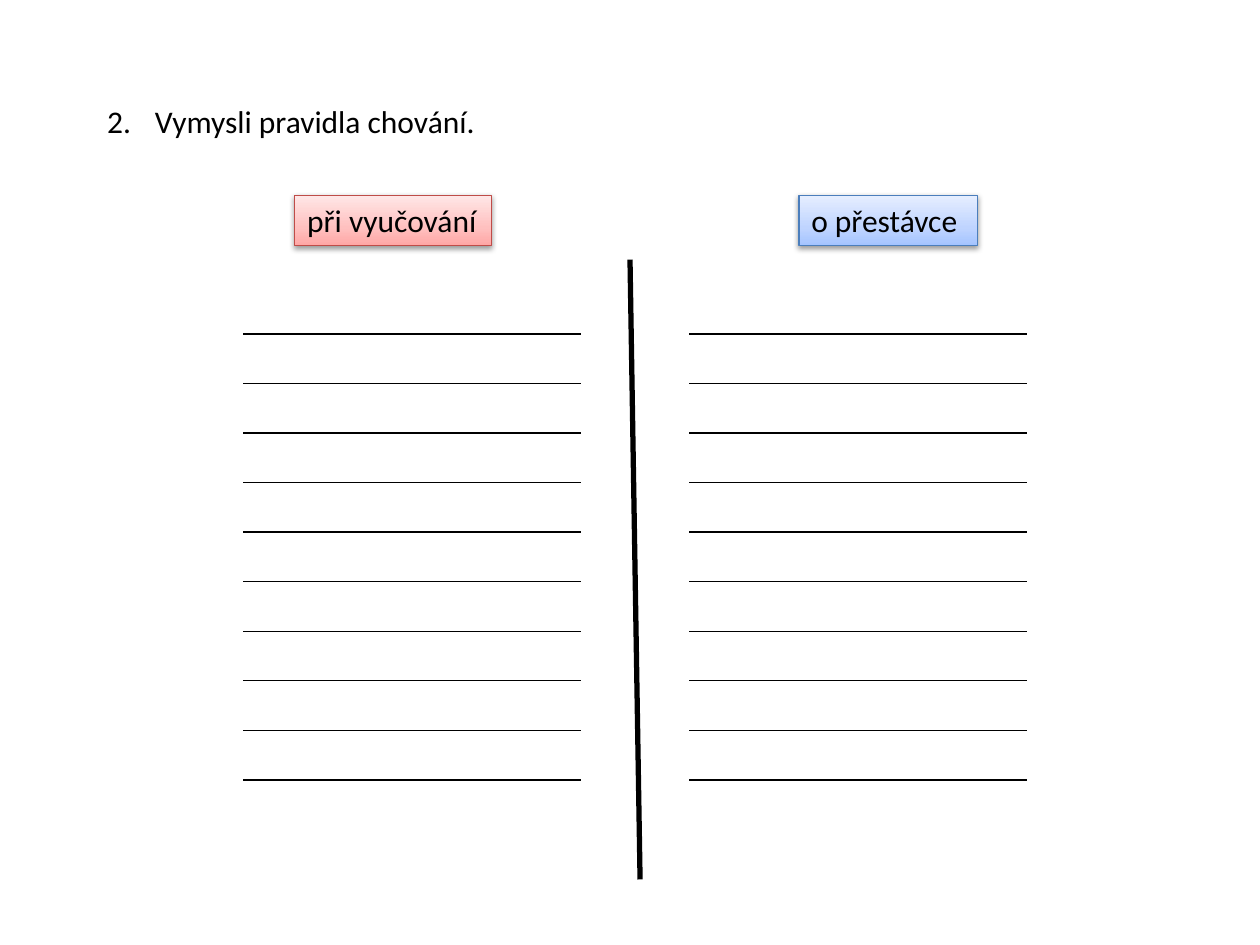
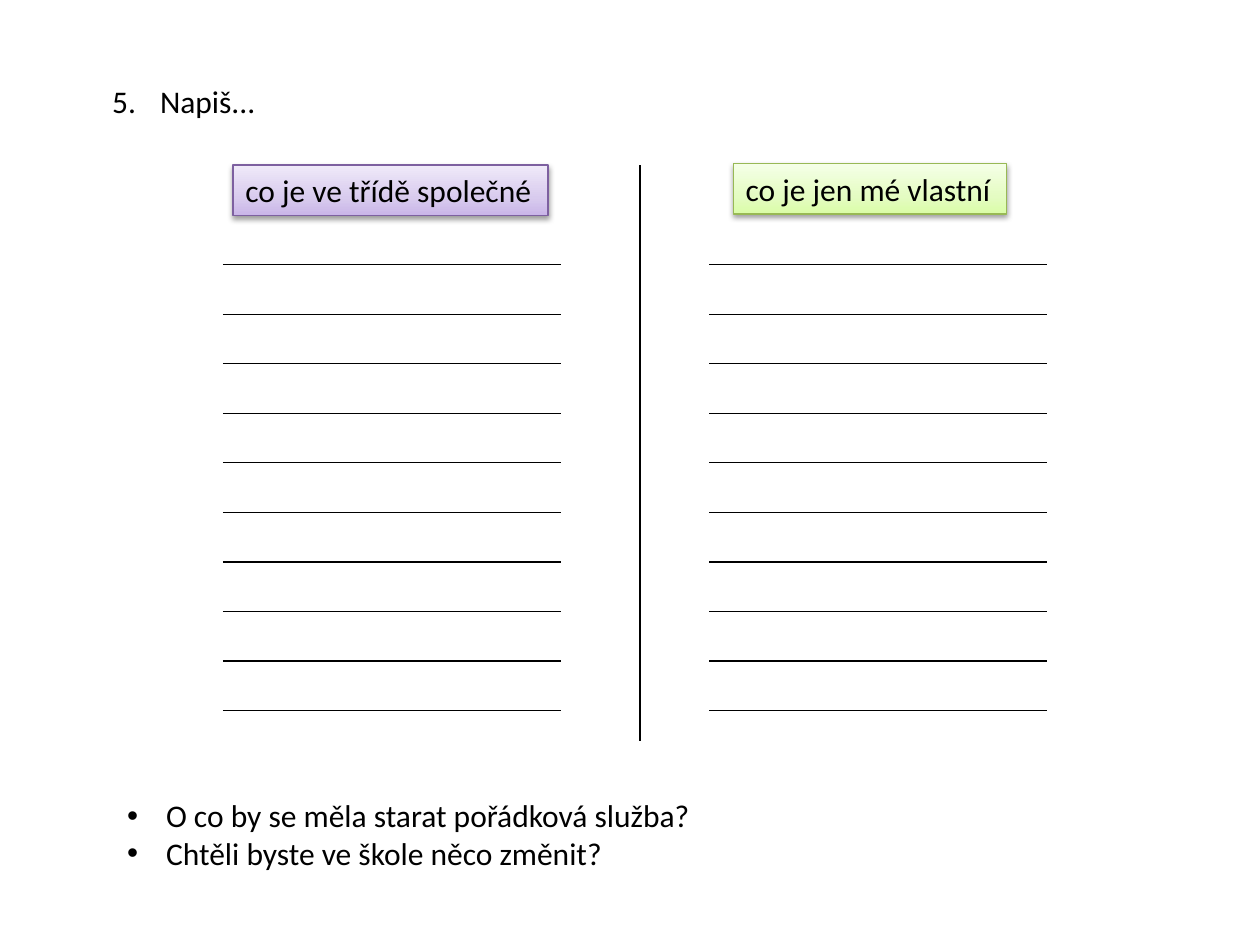
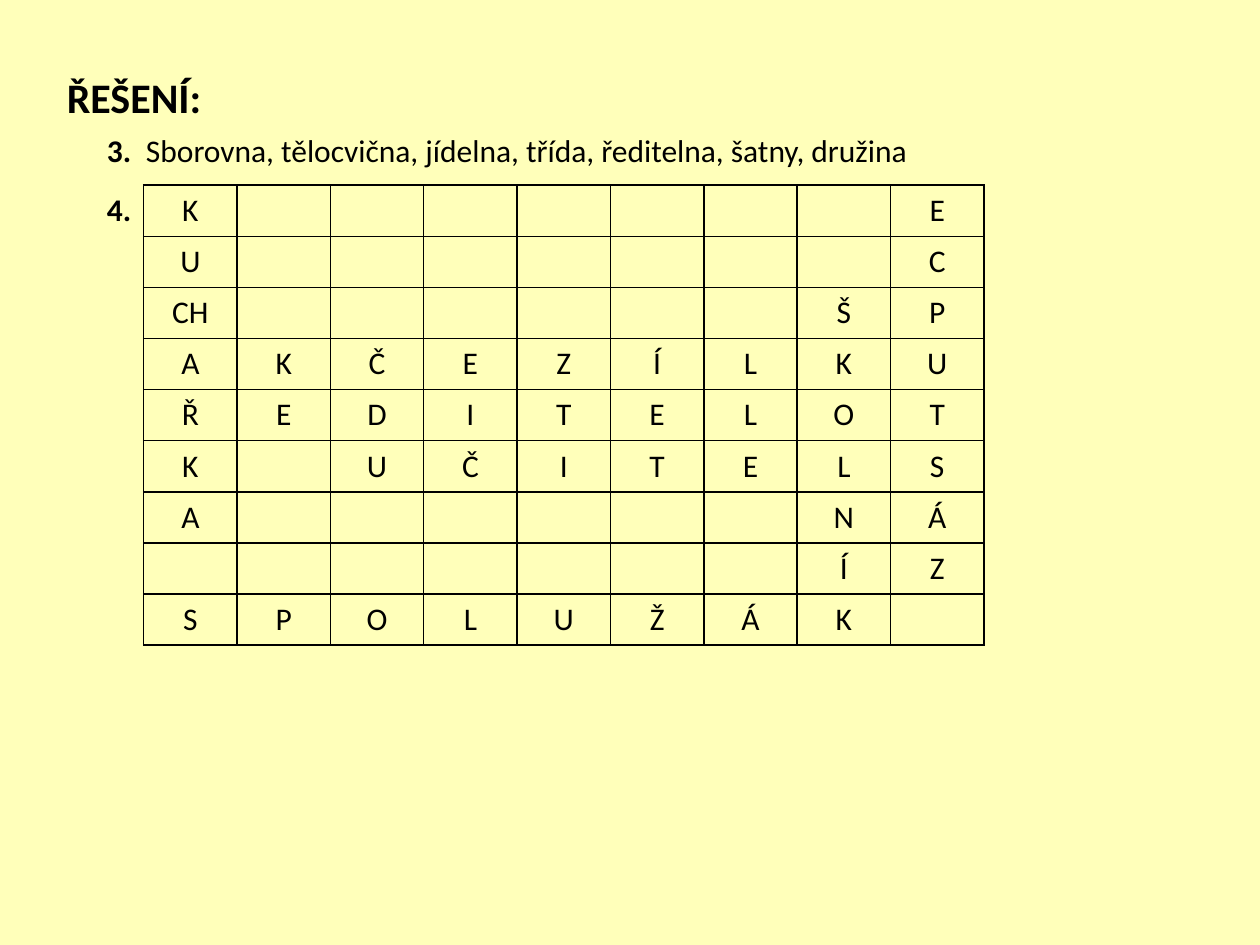
import copy

import pptx
import pptx.dml.color
import pptx.enum.shapes
import pptx.enum.text
import pptx.oxml
import pptx.oxml.ns
import pptx.oxml.xmlchemy
import pptx.util
from pptx.util import Inches

FONT = "Calibri"
COLORS = {"ink": "000000", "solution_background": "FFFFBA"}
# Each label: outline, then gradient from bottom to top.
LABEL_COLORS = {
    "red": ("BF4C48", "FFA6A5", "FFC0BF", "FFE7E7"),
    "blue": ("4B7EBC", "A4C4FF", "BFD4FF", "E6EEFF"),
    "purple": ("7D60A0", "C9B5E8", "D8CBEE", "F0EAF9"),
    "green": ("98B955", "DAFDA7", "E4FCC2", "F5FFE7"),
}
GRADIENT_POSITIONS = (0, 0.35, 1)
LABEL_HEIGHT = 0.4
ANSWER_COUNT, ANSWER_WIDTH, ANSWER_PITCH = 10, 2.68, 3.54 / 9
CROSSWORD = [
    "K.......E",
    "U.......C",
    ["CH", *"......ŠP"],
    "AKČEZÍLKU",
    "ŘEDITELOT",
    "K.UČITELS",
    "A......NÁ",
    ".......ÍZ",
    "SPOLUŽÁK.",
]


def rgb(value):
    return pptx.dml.color.RGBColor.from_string(value)


def add_xml(parent, tag, **attributes):
    element = pptx.oxml.xmlchemy.OxmlElement(tag)
    for name, value in attributes.items():
        element.set(name, str(value))
    parent.append(element)
    return element


def format_paragraph(paragraph, size=18, bold=False, alignment=pptx.enum.text.PP_ALIGN.LEFT):
    paragraph.alignment = alignment
    for run in paragraph.runs:
        run.font.name = FONT
        run.font.size = pptx.util.Pt(size)
        run.font.bold = bold
        run.font.color.rgb = rgb(COLORS["ink"])


def write_text(shape, text, size=18, bold=False):
    frame = shape.text_frame
    frame.text = text
    frame.word_wrap = False
    frame.auto_size = pptx.enum.text.MSO_AUTO_SIZE.NONE
    frame.vertical_anchor = pptx.enum.text.MSO_ANCHOR.TOP
    for paragraph in frame.paragraphs:
        format_paragraph(paragraph, size, bold)


def add_text(slide, left, top, width, height, text, bold=False):
    box = slide.shapes.add_textbox(Inches(left), Inches(top), Inches(width), Inches(height))
    write_text(box, text, bold=bold)
    return box


def set_title(slide, left, top, width, height, text, size=18, bold=False):
    title = slide.shapes.title
    title.left, title.top = Inches(left), Inches(top)
    title.width, title.height = Inches(width), Inches(height)
    write_text(title, text, size, bold)
    return title


def hang(paragraph, indent):
    """Give a paragraph a hanging indent and return its properties for a bullet."""
    properties = paragraph._p.get_or_add_pPr()
    properties.set("marL", str(Inches(indent)))
    properties.set("indent", str(-Inches(indent)))
    return properties


def set_numbered_title(slide, left, top, width, number, text):
    title = set_title(slide, left, top, width, 0.4, text)
    properties = hang(title.text_frame.paragraphs[0], 0.38)
    add_xml(properties, "a:buFont", typeface="+mj-lt")
    add_xml(properties, "a:buAutoNum", type="arabicPeriod", startAt=number)


def add_questions(slide, left, top, width, height, questions):
    box = add_text(slide, left, top, width, height, "\n".join(questions))
    for paragraph in box.text_frame.paragraphs:
        properties = hang(paragraph, 0.31)
        add_xml(properties, "a:buFont", typeface="Arial")
        add_xml(properties, "a:buChar", char="•")


def add_line(shapes, start, end, width=0.75):
    line = shapes.add_connector(
        pptx.enum.shapes.MSO_CONNECTOR.STRAIGHT, *map(Inches, (*start, *end)))
    line.line.color.rgb = rgb(COLORS["ink"])
    line.line.width = pptx.util.Pt(width)
    add_xml(line._element.spPr, "a:effectLst")


def add_label(slide, left, top, width, text, color):
    outline, *gradient = LABEL_COLORS[color]
    label = slide.shapes.add_shape(
        pptx.enum.shapes.MSO_SHAPE.RECTANGLE,
        Inches(left), Inches(top), Inches(width), Inches(LABEL_HEIGHT))
    label.line.color.rgb = rgb(outline)
    label.line.width = pptx.util.Pt(0.75)

    label.fill.gradient()
    label.fill.gradient_angle = 90
    properties = label._element.spPr
    stop_list = properties.find(".//" + pptx.oxml.ns.qn("a:gsLst"))
    stop_list.insert(1, copy.deepcopy(stop_list[0]))
    for stop, position, value in zip(label.fill.gradient_stops, GRADIENT_POSITIONS, gradient):
        stop.position = position
        stop.color.rgb = rgb(value)

    label.shadow.inherit = False
    effects = properties.find(pptx.oxml.ns.qn("a:effectLst"))
    shadow = add_xml(effects, "a:outerShdw", blurRad=40000, dist=20000,
                     dir=5400000, rotWithShape=0)
    shadow_color = add_xml(shadow, "a:srgbClr", val=COLORS["ink"])
    add_xml(shadow_color, "a:alpha", val=38000)
    write_text(label, text)


def add_answer_lines(slide, left, top):
    group = slide.shapes.add_group_shape()
    for index in range(ANSWER_COUNT):
        y = top + index * ANSWER_PITCH
        add_line(group.shapes, (left, y), (left + ANSWER_WIDTH, y))


def add_crossword(slide, left, top, width, height):
    size = len(CROSSWORD)
    frame = slide.shapes.add_table(
        size, size, Inches(left), Inches(top), Inches(width), Inches(height))
    table = frame.table
    table.first_row = table.horz_banding = False
    for column in table.columns:
        column.width = Inches(width / size)
    for row, letters in zip(table.rows, CROSSWORD):
        row.height = Inches(height / size)
        for cell, letter in zip(row.cells, letters):
            cell.text = letter.replace(".", "")
            format_paragraph(cell.text_frame.paragraphs[0],
                             alignment=pptx.enum.text.PP_ALIGN.CENTER)
            add_borders(cell)
            cell.fill.background()


def add_borders(cell):
    properties = cell._tc.get_or_add_tcPr()
    for side in ("a:lnL", "a:lnR", "a:lnT", "a:lnB"):
        border = add_xml(properties, side, w=pptx.util.Pt(1))
        fill = add_xml(border, "a:solidFill")
        add_xml(fill, "a:srgbClr", val=COLORS["ink"])


def build_rules_slide(slide):
    set_numbered_title(slide, 0.75, 0.76, 3.23, 2, "Vymysli pravidla chování.")
    add_label(slide, 6.34, 1.55, 1.42, "o přestávce", "blue")
    add_label(slide, 2.34, 1.55, 1.56, "při vyučování", "red")
    add_line(slide.shapes, (5, 2.06), (5.08, 6.98), width=3)
    for left in (1.93, 5.47):
        add_answer_lines(slide, left, 2.65)


def build_belongings_slide(slide):
    set_numbered_title(slide, 0.79, 0.6, 1.34, 5, "Napiš...")
    add_label(slide, 1.85, 1.31, 2.5, "co je ve třídě společné", "purple")
    add_label(slide, 5.82, 1.3, 2.17, "co je jen mé vlastní", "green")
    add_line(slide.shapes, (5.08, 1.31), (5.08, 5.88))
    for left in (1.77, 5.63):
        add_answer_lines(slide, left, 2.1)
    add_questions(slide, 0.91, 6.27, 4.72, 0.71, [
        "O co by se měla starat pořádková služba?",
        "Chtěli byste ve škole něco změnit?",
    ])


def build_solution_slide(slide):
    slide.background.fill.solid()
    slide.background.fill.fore_color.rgb = rgb(COLORS["solution_background"])
    set_title(slide, 0.43, 0.52, 1.36, 0.5, "ŘEŠENÍ:", size=24, bold=True)
    add_text(slide, 1.06, 0.99, 6.32, 0.4,
             "Sborovna, tělocvična, jídelna, třída, ředitelna, šatny, družina")
    add_crossword(slide, 1.14, 1.47, 6.67, 3.65)
    for number, top in (("3.", 0.99), ("4.", 1.46)):
        add_text(slide, 0.75, top, 0.4, 0.4, number, bold=True)


def main():
    presentation = pptx.Presentation()
    presentation.slide_width = Inches(10)
    presentation.slide_height = Inches(7.5)
    title_only = presentation.slide_layouts[5]
    for build in (build_rules_slide, build_belongings_slide, build_solution_slide):
        build(presentation.slides.add_slide(title_only))
    presentation.save("out.pptx")


if __name__ == "__main__":
    main()
